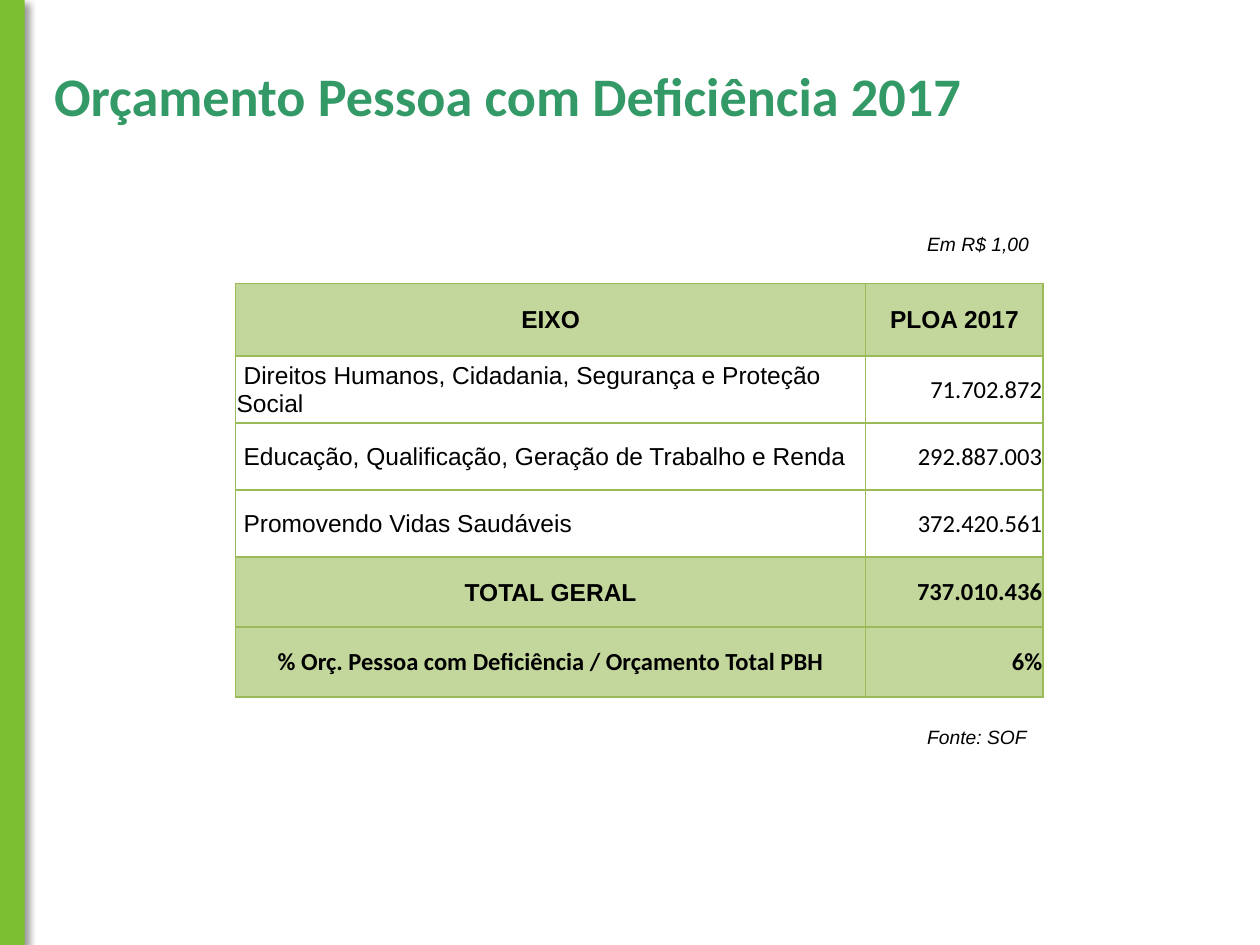
from lxml.etree import SubElement
from pptx import Presentation
from pptx.dml.color import RGBColor
from pptx.enum.shapes import MSO_SHAPE
from pptx.enum.text import MSO_ANCHOR, MSO_AUTO_SIZE, PP_ALIGN
from pptx.oxml import parse_xml
from pptx.oxml.ns import qn
from pptx.util import Cm, Pt

DRAWING_NS = "http://schemas.openxmlformats.org/drawingml/2006/main"
BLACK, PALE_GREEN, BORDER_GREEN = "000000", "C3D69B", "9BBB59"

COLUMN_WIDTHS = (12.7, 3.58)
ROW_HEIGHTS = (1.47, 1.35, 1.35, 1.35, 1.41, 1.41)
BUDGET = (
    ("EIXO", "PLOA 2017"),
    ("Direitos Humanos, Cidadania, Segurança e Proteção Social", "71.702.872"),
    ("Educação, Qualificação, Geração de Trabalho e Renda", "292.887.003"),
    ("Promovendo Vidas Saudáveis", "372.420.561"),
    ("TOTAL GERAL", "737.010.436"),
    ("% Orç. Pessoa com Deficiência / Orçamento Total PBH", "6%"),
)
HEADER_ROW, PERCENT_ROW = 0, 5
AXIS_ROWS = (1, 2, 3)


def rgb(value):
    return RGBColor.from_string(value)


def apply(target, formats):
    for attribute, value in formats.items():
        setattr(target, attribute, value)


def write(paragraph, text, color, formats):
    run = paragraph.add_run()
    run.text = text
    apply(run.font, formats)
    run.font.color.rgb = rgb(color)


def add_label(slide, box, text, color, formats, **frame_formats):
    frame = slide.shapes.add_textbox(*map(Cm, box)).text_frame
    apply(frame, {"word_wrap": True, "auto_size": MSO_AUTO_SIZE.SHAPE_TO_FIT_TEXT} | frame_formats)
    write(frame.paragraphs[0], text, color, formats)


def add_side_band(slide, height):
    band = slide.shapes.add_shape(MSO_SHAPE.RECTANGLE, 0, 0, Cm(0.5), height)
    band.fill.solid()
    band.fill.fore_color.rgb = rgb("7CBF33")
    band.line.fill.background()
    band.shadow.inherit = False
    effects = band.element.spPr.find(qn("a:effectLst"))
    effects.append(parse_xml(
        f'<a:outerShdw xmlns:a="{DRAWING_NS}" blurRad="{Pt(4)}" dist="{Pt(3)}" '
        f'dir="2700000" rotWithShape="0"><a:srgbClr val="{BLACK}">'
        '<a:alpha val="40000"/></a:srgbClr></a:outerShdw>'
    ))


def outline_cell(cell):
    properties = cell._tc.get_or_add_tcPr()
    for side in ("lnL", "lnR", "lnT", "lnB"):
        border = SubElement(properties, qn(f"a:{side}"), w=str(Pt(1)))
        SubElement(SubElement(border, qn("a:solidFill")), qn("a:srgbClr"), val=BORDER_GREEN)


def fill_cell(cell, text, row, column):
    is_axis = row in AXIS_ROWS
    is_amount = column == 1 and row != HEADER_ROW
    outline_cell(cell)
    if is_axis:
        cell.fill.background()
    else:
        cell.fill.solid()
        cell.fill.fore_color.rgb = rgb(PALE_GREEN)
    apply(cell, {
        "margin_left": Cm(0.02),
        "margin_right": Cm(0.02),
        "margin_top": Cm(0.02),
        "margin_bottom": 0,
        "vertical_anchor": MSO_ANCHOR.MIDDLE,
    })
    paragraph = cell.text_frame.paragraphs[0]
    if is_amount:
        paragraph.alignment = PP_ALIGN.RIGHT
    elif is_axis:
        paragraph.alignment = PP_ALIGN.LEFT
        paragraph._p.get_or_add_pPr().set("indent", str(Cm(0.14)))
    else:
        paragraph.alignment = PP_ALIGN.CENTER
    typeface = "Calibri" if is_amount or row == PERCENT_ROW else "Arial"
    write(paragraph, text, BLACK, {"name": typeface, "size": Pt(14), "bold": not is_axis})


def add_budget_table(slide):
    table = slide.shapes.add_table(
        len(BUDGET), len(COLUMN_WIDTHS), Cm(4.75), Cm(5.71),
        Cm(sum(COLUMN_WIDTHS)), Cm(sum(ROW_HEIGHTS)),
    ).table
    apply(table, {"first_row": False, "horz_banding": False})
    for column, width in zip(table.columns, COLUMN_WIDTHS):
        column.width = Cm(width)
    for row, height in zip(table.rows, ROW_HEIGHTS):
        row.height = Cm(height)
    for row, entries in enumerate(BUDGET):
        for column, text in enumerate(entries):
            fill_cell(table.cell(row, column), text, row, column)


def main():
    presentation = Presentation()
    apply(presentation, {"slide_width": Cm(25.4), "slide_height": Cm(19.05)})
    slide = presentation.slides.add_slide(presentation.slide_layouts[6])
    heading = {"name": "Calibri", "size": Pt(31), "bold": True}
    note = {"name": "Arial", "size": Pt(11), "italic": True}
    add_label(slide, (0.1, 1.14, 22.4, 1.57), "Orçamento Pessoa com Deficiência 2017",
              "339966", heading, margin_left=Cm(0.99))
    for text, top in (("Em R$ 1,00", 4.55), ("Fonte: SOF", 14.5)):
        add_label(slide, (18.44, top, 2.59, 0.74), text, BLACK, note, word_wrap=False)
    add_side_band(slide, presentation.slide_height)
    add_budget_table(slide)
    presentation.save("out.pptx")


if __name__ == "__main__":
    main()
